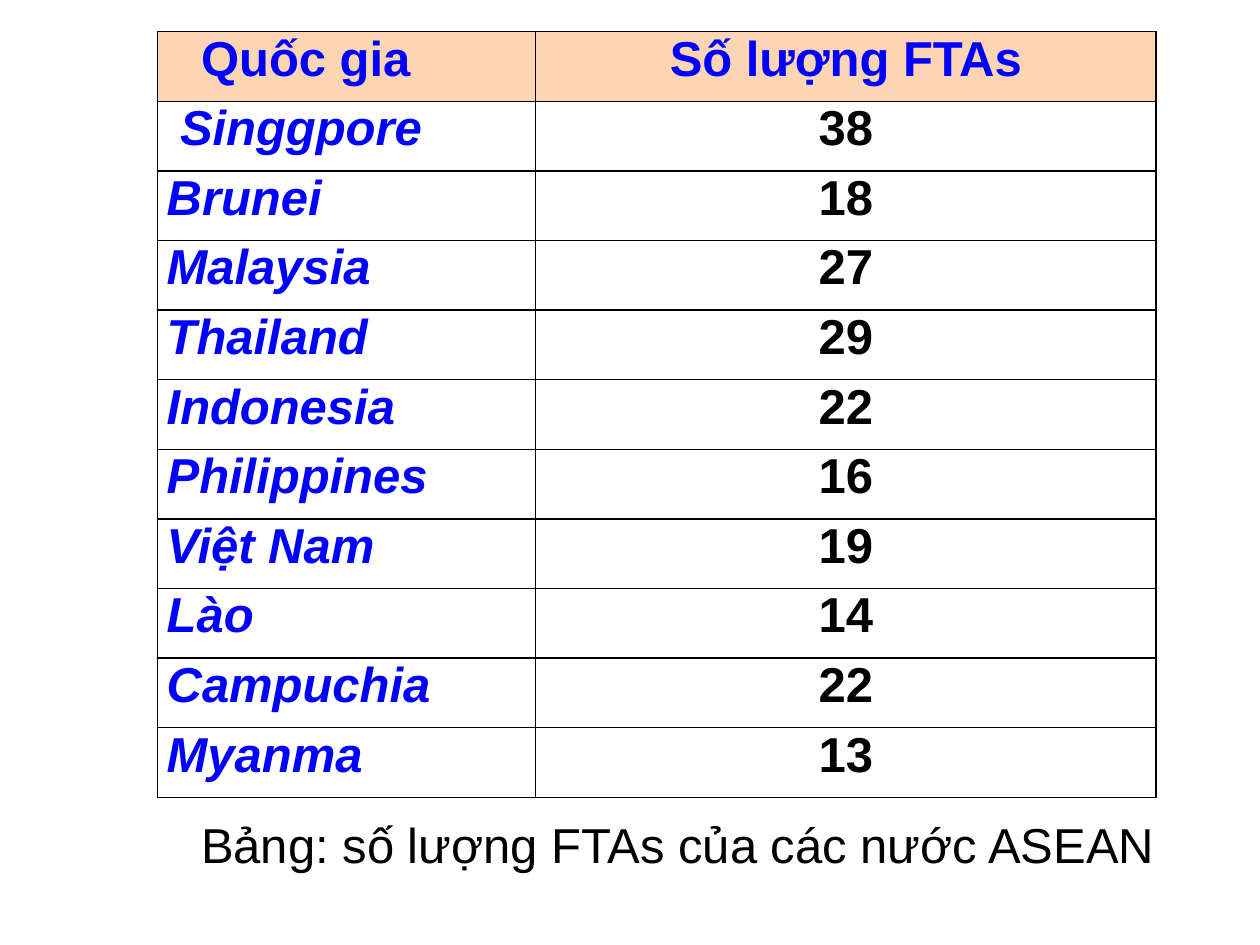
from lxml import etree
from pptx import Presentation
from pptx.dml.color import RGBColor
from pptx.enum.text import MSO_AUTO_SIZE, PP_ALIGN
from pptx.oxml.ns import qn
from pptx.util import Cm, Pt

CENTER, JUSTIFY = PP_ALIGN.CENTER, PP_ALIGN.JUSTIFY
GROW = MSO_AUTO_SIZE.SHAPE_TO_FIT_TEXT
BLANK_LAYOUT = 6

BLUE, BLACK, PEACH = "0000FF", "000000", "FCD5B5"
CELL_MARGIN = 0.18
HEADER_RIGHT_MARGIN = 1.83  # shifts the country heading to the left
FIRST_COUNTRY_MARGIN = 0.45

HEADINGS = ("Quốc gia", "Số lượng FTAs")
FTA_COUNTS = [
    ("Singgpore", 38),
    ("Brunei", 18),
    ("Malaysia", 27),
    ("Thailand", 29),
    ("Indonesia", 22),
    ("Philippines", 16),
    ("Việt Nam", 19),
    ("Lào", 14),
    ("Campuchia", 22),
    ("Myanma", 13),
]


def rgb(value):
    return RGBColor.from_string(value)


class SlideBuilder:
    font_name = "Arial"
    font_size = 28
    spacing = 4.5

    def __init__(self, slide):
        self.slide = slide

    def style(self, paragraph, color, align, bold=False, italic=False):
        paragraph.alignment = align
        font = paragraph.font
        font.name, font.size = self.font_name, Pt(self.font_size)
        font.bold, font.italic = bold, italic
        font.color.rgb = rgb(color)

    def caption(self, text, left, top, width, height):
        box = self.slide.shapes.add_textbox(Cm(left), Cm(top), Cm(width), Cm(height))
        frame = box.text_frame
        frame.word_wrap = True
        frame.auto_size = GROW
        frame.text = text
        self.style(frame.paragraphs[0], BLACK, CENTER)

    def table(self, left, top, column_widths, row_height, row_count):
        table = self.slide.shapes.add_table(
            row_count, len(column_widths), Cm(left), Cm(top),
            Cm(sum(column_widths)), Cm(row_height * row_count)).table
        for column, width in zip(table.columns, column_widths):
            column.width = Cm(width)
        for row in table.rows:
            row.height = Cm(row_height)
        return table

    def cell(self, cell, text, color, align, fill=None, italic=False,
             left=CELL_MARGIN, right=CELL_MARGIN):
        cell.margin_left, cell.margin_right = Cm(left), Cm(right)
        cell.margin_top = cell.margin_bottom = 0
        cell.text = text
        paragraph = cell.text_frame.paragraphs[0]
        paragraph.space_before = paragraph.space_after = Pt(self.spacing)
        self.style(paragraph, color, align, bold=True, italic=italic)
        self.borders(cell)
        if fill:
            cell.fill.solid()
            cell.fill.fore_color.rgb = rgb(fill)
        else:
            cell.fill.background()

    def borders(self, cell):
        properties = cell._tc.get_or_add_tcPr()
        for side in ("a:lnL", "a:lnR", "a:lnT", "a:lnB"):
            line = etree.SubElement(properties, qn(side), w=str(Pt(1)))
            solid = etree.SubElement(line, qn("a:solidFill"))
            etree.SubElement(solid, qn("a:srgbClr"), val=BLACK)


def main():
    presentation = Presentation()
    presentation.slide_width, presentation.slide_height = Cm(25.4), Cm(19.05)
    layout = presentation.slide_layouts[BLANK_LAYOUT]
    builder = SlideBuilder(presentation.slides.add_slide(layout))

    # Caption below the table
    builder.caption("Bảng: số lượng FTAs của các nước ASEAN", 2.96, 16.3, 21.4, 1.45)

    # Table heading
    fta_table = builder.table(3.18, 0.64, (7.62, 12.5), 1.404, len(FTA_COUNTS) + 1)
    country_heading, count_heading = HEADINGS
    builder.cell(fta_table.cell(0, 0), country_heading, BLUE, CENTER, PEACH,
                 right=HEADER_RIGHT_MARGIN)
    builder.cell(fta_table.cell(0, 1), count_heading, BLUE, CENTER, PEACH)

    # One row per country
    for row, (country, count) in enumerate(FTA_COUNTS, start=1):
        margin = FIRST_COUNTRY_MARGIN if row == 1 else CELL_MARGIN
        builder.cell(fta_table.cell(row, 0), country, BLUE, JUSTIFY,
                     italic=True, left=margin)
        builder.cell(fta_table.cell(row, 1), str(count), BLACK, CENTER)

    presentation.save("out.pptx")


if __name__ == "__main__":
    main()
